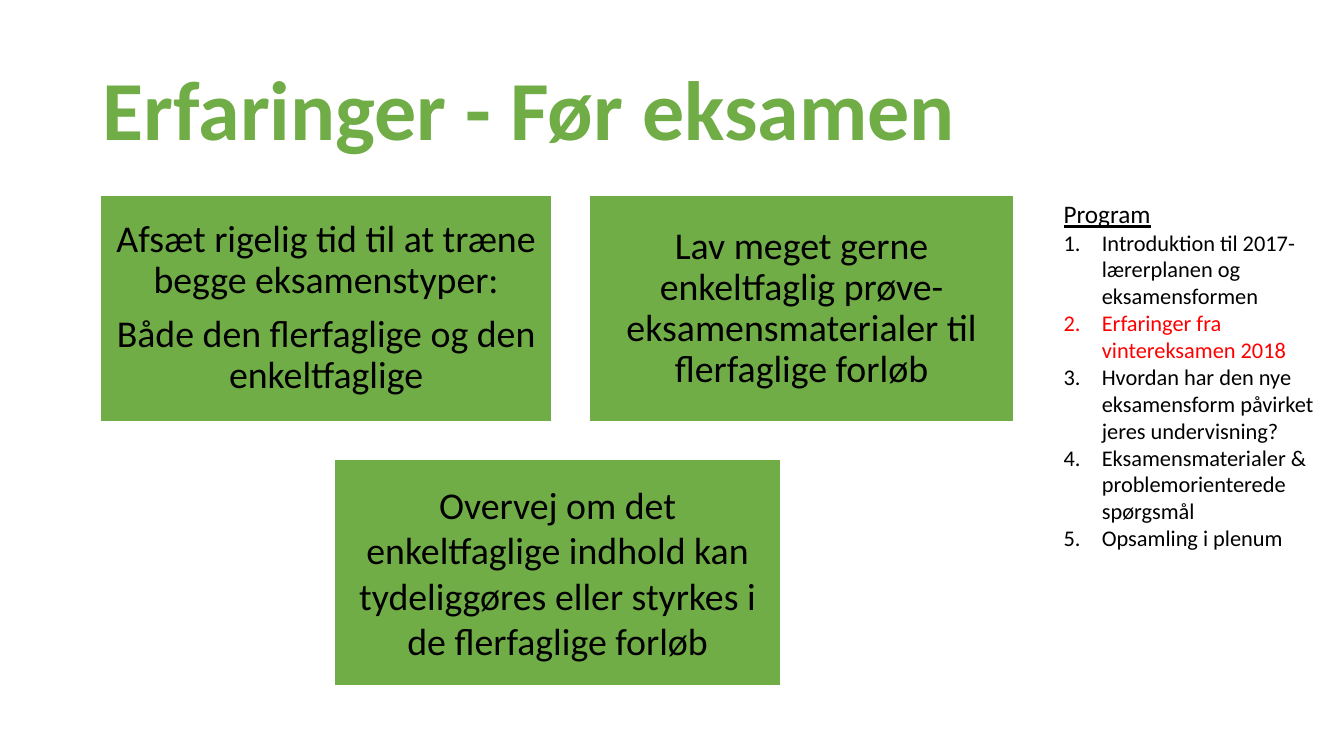
from pptx import Presentation
from pptx.dml.color import RGBColor
from pptx.enum.shapes import MSO_SHAPE
from pptx.enum.text import MSO_ANCHOR, PP_ALIGN
from pptx.oxml.ns import qn
from pptx.util import Inches, Pt
from lxml import etree

RECT = MSO_SHAPE.RECTANGLE
MIDDLE = MSO_ANCHOR.MIDDLE
CENTER = PP_ALIGN.CENTER

FONT = "Calibri"
COLORS = {"green": "70AD47", "black": "000000", "red": "FF0000", "white": "FFFFFF"}

BOX_HEIGHT = 2.24
ROW_TOPS = (1.94, 4.56)
# left, top, width, line spacing, paragraphs
BOXES = [
    (1, ROW_TOPS[0], 4.47, 0.9,
     ["Afsæt rigelig tid til at træne begge eksamenstyper:",
      "Både den flerfaglige og den enkeltfaglige"]),
    (5.85, ROW_TOPS[0], 4.2, 0.9,
     ["Lav meget gerne enkeltfaglig prøve-eksamensmaterialer til flerfaglige forløb"]),
    (3.32, ROW_TOPS[1], 4.42, 1.0,
     ["Overvej om det enkeltfaglige indhold kan tydeliggøres eller styrkes i "
      "de flerfaglige forløb"]),
]

PROGRAM = [
    "Introduktion til 2017-lærerplanen og eksamensformen",
    "Erfaringer fra vintereksamen 2018",
    "Hvordan har den nye eksamensform påvirket jeres undervisning?",
    "Eksamensmaterialer & problemorienterede spørgsmål",
    "Opsamling i plenum",
]
CURRENT_ITEM = 1


def rgb(name):
    return RGBColor.from_string(COLORS[name])


def add_run(p, text, size, color="black", bold=False, underline=False):
    r = p.add_run()
    r.text = text
    r.font.name = FONT
    r.font.size = Pt(size)
    r.font.color.rgb = rgb(color)
    r.font.bold = bold
    r.font.underline = underline


def add_text_box(s, left, top, width, height):
    tf = s.shapes.add_textbox(
        Inches(left), Inches(top), Inches(width), Inches(height)).text_frame
    tf.word_wrap = True
    return tf


def number_paragraph(p):
    """Turn a paragraph into an automatically numbered item with a hanging indent."""
    pPr = p._p.get_or_add_pPr()
    indent = Inches(0.38)
    pPr.set("marL", str(indent))
    pPr.set("indent", str(-indent))
    etree.SubElement(pPr, qn("a:buFont"), typeface="+mj-lt")
    etree.SubElement(pPr, qn("a:buAutoNum"), type="arabicPeriod")


def add_title(s, text):
    tf = add_text_box(s, 0.92, 0.4, 11.98, 1.45)
    tf.vertical_anchor = MIDDLE
    p = tf.paragraphs[0]
    p.line_spacing = 0.9
    add_run(p, text, 60, "green", bold=True)


def add_program(s, heading, items, current):
    tf = add_text_box(s, 10.45, 1.92, 2.69, 3.9)
    add_run(tf.paragraphs[0], heading, 18, underline=True)
    for i, item in enumerate(items):
        p = tf.add_paragraph()
        number_paragraph(p)
        add_run(p, item, 16, "red" if i == current else "black")


def add_box(s, left, top, width, line_spacing, paragraphs):
    sp = s.shapes.add_shape(
        RECT, Inches(left), Inches(top), Inches(width), Inches(BOX_HEIGHT))
    sp.shadow.inherit = False
    sp.fill.solid()
    sp.fill.fore_color.rgb = rgb("green")
    sp.line.color.rgb = rgb("white")
    sp.line.width = Pt(1)
    tf = sp.text_frame
    tf.word_wrap = True
    tf.vertical_anchor = MIDDLE
    tf.margin_left = tf.margin_right = tf.margin_top = tf.margin_bottom = Inches(0.11)
    for i, text in enumerate(paragraphs):
        p = tf.add_paragraph() if i else tf.paragraphs[0]
        p.alignment = CENTER
        p.line_spacing = line_spacing
        if i:
            p.space_before = Pt(9.5)
        add_run(p, text, 27)


def main():
    prs = Presentation()
    prs.slide_width, prs.slide_height = Inches(13.33), Inches(7.5)
    s = prs.slides.add_slide(prs.slide_layouts[6])
    add_title(s, "Erfaringer - Før eksamen")
    add_program(s, "Program", PROGRAM, CURRENT_ITEM)
    for box in BOXES:
        add_box(s, *box)
    prs.save("out.pptx")


if __name__ == "__main__":
    main()
